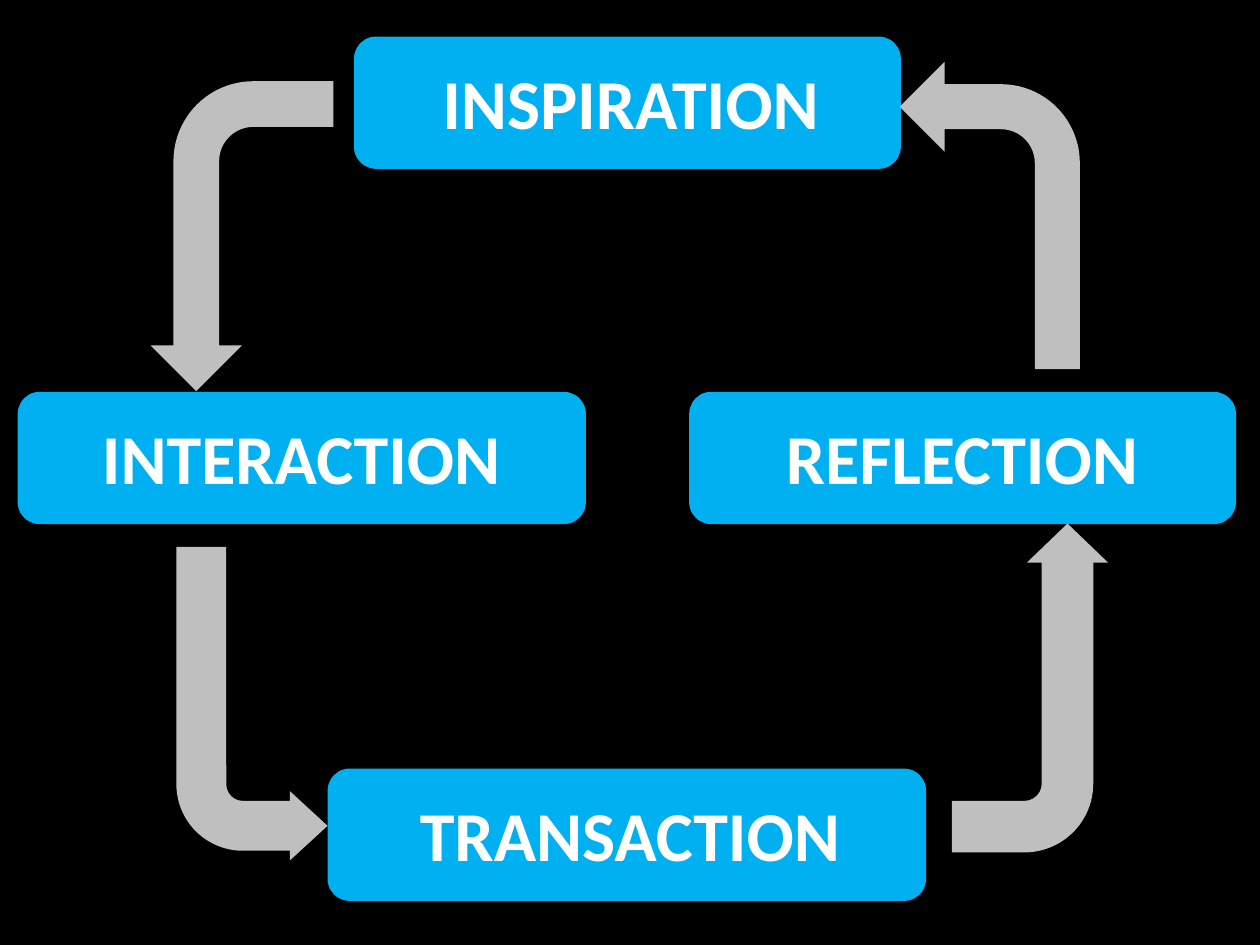
"""Builds a slide with a four-stage cycle joined by bent arrows."""
from pptx import Presentation
from pptx.dml.color import RGBColor
from pptx.enum.shapes import MSO_SHAPE as SHAPE
from pptx.enum.text import MSO_AUTO_SIZE as FIT, MSO_ANCHOR as ANCHOR, PP_ALIGN as ALIGN
from pptx.util import Inches, Pt

COLORS = {"back": "000000", "stage": "00B0F0", "arrow": "BFBFBF", "text": "FFFFFF"}
WIDTH, HEIGHT = Inches(10), Inches(7.5)
COLS, ROWS = 100, 75
STAGE_H, LABEL_H, LABEL_INSET = 10.5, 7.9, 1.3

STAGES = [
    ("INSPIRATION", 28.1, 2.9, 43.4, 30.4, 39.3),
    ("INTERACTION", 1.4, 31.1, 45.1, 3.5, 40.8),
    ("REFLECTION", 54.7, 31.1, 43.4, 56.7, 39.3),
    ("TRANSACTION", 26, 61, 47.5, 28.5, 43),
]
ARROWS = [
    ((6.9, 11.5, 24.6, 14.5), 270, "flipH", ()),
    ((14, 43.4, 12, 24.9), 180, "flipH", (0.33, 0.23, 0.25, 0.44)),
    ((68.7, 48.4, 26.1, 12.4), 90, "flipH", (0.33, 0.26, 0.25, 0.44)),
    ((71.4, 4.9, 14.3, 24.4), 180, "flipV", ()),
]


def grid(left, top, width, height):
    """Turn grid columns and rows into slide lengths."""
    col, row = WIDTH / COLS, HEIGHT / ROWS
    return round(left * col), round(top * row), round(width * col), round(height * row)


def paint(fill, color):
    """Give a fill one solid colour."""
    fill.solid()
    fill.fore_color.rgb = RGBColor.from_string(COLORS[color])


def add_shape(shapes, kind, box, color):
    """Add a flat shape without outline or shadow."""
    sp = shapes.add_shape(kind, *grid(*box))
    paint(sp.fill, color)
    sp.line.fill.background()
    sp.shadow.inherit = False
    return sp


def write(sp, text, size=40, font="Calibri", color="text", bold=True, align=ALIGN.CENTER):
    """Write one formatted line into a shape."""
    tf = sp.text_frame
    tf.word_wrap = True
    tf.auto_size = FIT.SHAPE_TO_FIT_TEXT
    tf.vertical_anchor = ANCHOR.TOP
    p = tf.paragraphs[0]
    p.alignment = align
    r = p.add_run()
    r.text = text
    r.font.size, r.font.name, r.font.bold = Pt(size), font, bold
    r.font.color.rgb = RGBColor.from_string(COLORS[color])


def add_stage(s, text, left, top, width, label_left, label_width):
    """Add a rounded panel grouped with its label."""
    shapes = s.shapes.add_group_shape().shapes
    add_shape(shapes, SHAPE.ROUNDED_RECTANGLE, (left, top, width, STAGE_H), "stage")
    box = (label_left, top + LABEL_INSET, label_width, LABEL_H)
    write(add_shape(shapes, SHAPE.RECTANGLE, box, "stage"), text)


def add_arrow(s, box, rotation, flip, adjustments):
    """Add a bent arrow, turned and mirrored."""
    sp = add_shape(s.shapes, SHAPE.BENT_ARROW, box, "arrow")
    sp.rotation = rotation
    sp.element.spPr.xfrm.set(flip, "1")
    for i, value in enumerate(adjustments):
        sp.adjustments[i] = value


def main():
    """Build and save the slide."""
    prs = Presentation()
    prs.slide_width, prs.slide_height = WIDTH, HEIGHT
    s = prs.slides.add_slide(prs.slide_layouts[6])
    paint(s.background.fill, "back")
    for stage in STAGES:
        add_stage(s, *stage)
    for arrow in ARROWS:
        add_arrow(s, *arrow)
    prs.save("out.pptx")


if __name__ == "__main__":
    main()
